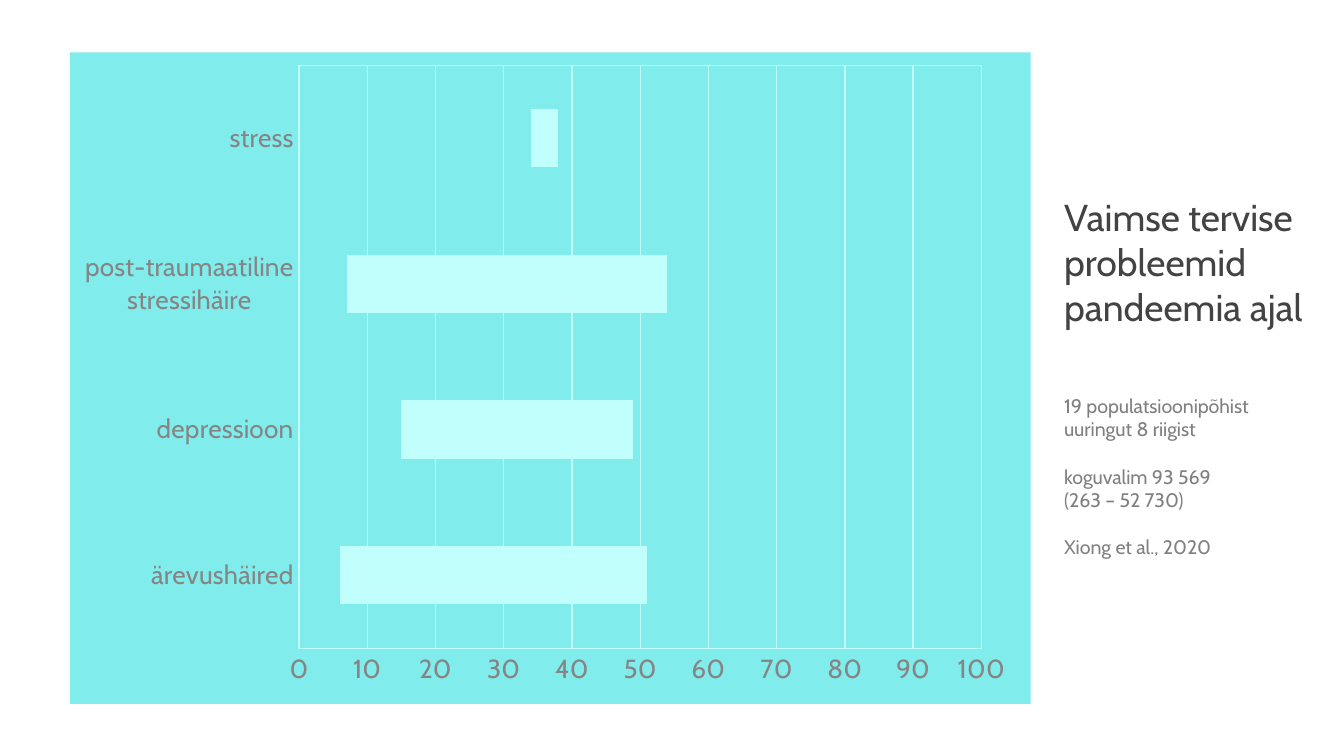
"""Build a slide with a floating range chart of mental health problems."""
from lxml.etree import SubElement
from pptx import Presentation
from pptx.chart.data import CategoryChartData
from pptx.dml.color import RGBColor
from pptx.enum.chart import XL_CHART_TYPE as ChartType, XL_TICK_MARK as TickMark
from pptx.enum.shapes import MSO_SHAPE as Shape
from pptx.enum.text import MSO_ANCHOR as Anchor
from pptx.oxml import parse_xml
from pptx.oxml.ns import nsdecls, qn
from pptx.util import Pt

FONT = "Cabin"
COLORS = {
    "panel": "81ECEC",
    "bar": "C0FFFC",
    "title": "434343",
    "label": "858585",
    "note": "808080",
}
RANGES = {
    "ärevushäired": (6, 45),
    "depressioon": (15, 34),
    "post-traumaatiline\nstressihäire": (7, 47),
    "stress": (34, 4),
}
PLOT_LAYOUT = {"x": 0.24, "y": 0.02, "w": 0.71, "h": 0.9}
PARAGRAPHS = [
    ("Vaimse tervise probleemid pandeemia ajal", 20, "title", 0),
    ("19 populatsioonipõhist uuringut 8 riigist", 10.5, "note", 35),
    ("koguvalim 93 569", 10.5, "note", 12.6),
    ("(263 – 52 730)", 10.5, "note", 0),
    ("Xiong et al., 2020", 10.5, "note", 12.6),
]


def rgb(name):
    return RGBColor.from_string(COLORS[name])


def style_font(font, size, color):
    font.name = FONT
    font.size = Pt(size)
    font.color.rgb = rgb(color)


def add_panel(slide, left, top, width, height):
    panel = slide.shapes.add_shape(
        Shape.RECTANGLE, Pt(left), Pt(top), Pt(width), Pt(height))
    panel.shadow.inherit = False
    panel.fill.solid()
    panel.fill.fore_color.rgb = rgb("panel")
    panel.line.fill.background()


def style_axis(axis):
    axis.major_tick_mark = axis.minor_tick_mark = TickMark.NONE
    axis.format.line.fill.background()
    style_font(axis.tick_labels.font, 14, "label")


def style_plot_area(chart):
    plot_area = chart._chartSpace.chart.plotArea
    for layout in plot_area.findall(qn("c:layout")):
        plot_area.remove(layout)
    layout = parse_xml(f"<c:layout {nsdecls('c')}/>")
    manual = SubElement(layout, qn("c:manualLayout"))
    settings = {"layoutTarget": "inner", "xMode": "edge", "yMode": "edge", **PLOT_LAYOUT}
    for tag, value in settings.items():
        SubElement(manual, qn(f"c:{tag}")).set("val", str(value))
    plot_area.insert(0, layout)
    plot_area.append(parse_xml(
        f"<c:spPr {nsdecls('c', 'a')}><a:noFill/><a:ln w='9525'><a:solidFill>"
        f"<a:srgbClr val='{COLORS['bar']}'/></a:solidFill></a:ln></c:spPr>"))


def add_range_chart(slide, left, top, width, height):
    data = CategoryChartData()
    data.categories = list(RANGES)
    for number, values in enumerate(zip(*RANGES.values()), 1):
        data.add_series(f"Series {number}", values)
    chart = slide.shapes.add_chart(
        ChartType.BAR_STACKED, Pt(left), Pt(top), Pt(width), Pt(height), data).chart
    chart.has_title = False
    chart.has_legend = False
    style_font(chart.font, 14, "title")

    plot = chart.plots[0]
    plot.gap_width = 150
    plot.overlap = 100
    plot.vary_by_categories = False
    offset, span = plot.series
    offset.format.fill.background()
    offset.format.line.fill.background()
    span.format.fill.solid()
    span.format.fill.fore_color.rgb = rgb("bar")

    value_axis = chart.value_axis
    for axis in (chart.category_axis, value_axis):
        style_axis(axis)
    value_axis.minimum_scale, value_axis.maximum_scale = 0, 100
    value_axis.major_unit = 10
    value_axis.has_major_gridlines = True
    gridline = value_axis.major_gridlines.format.line
    gridline.width = Pt(0.75)
    gridline.color.rgb = rgb("bar")
    style_plot_area(chart)


def add_text(slide, left, top, width, height):
    box = slide.shapes.add_textbox(Pt(left), Pt(top), Pt(width), Pt(height))
    frame = box.text_frame
    frame.word_wrap = True
    frame.vertical_anchor = Anchor.MIDDLE
    frame.margin_left = frame.margin_right = Pt(7.2)
    frame.margin_top = frame.margin_bottom = Pt(7.2)
    for index, (text, size, color, gap) in enumerate(PARAGRAPHS):
        paragraph = frame.add_paragraph() if index else frame.paragraphs[0]
        paragraph.space_before = Pt(gap)
        paragraph._p.get_or_add_pPr().set("marL", str(Pt(10.8)))
        run = paragraph.add_run()
        run.text = text
        style_font(run.font, size, color)


def main():
    presentation = Presentation()
    presentation.slide_width, presentation.slide_height = Pt(720), Pt(405)
    slide = presentation.slides.add_slide(presentation.slide_layouts[6])
    add_panel(slide, 37.4, 28.1, 514.8, 349)
    add_range_chart(slide, 36.7, 28.1, 514.8, 347)
    add_text(slide, 552.2, 28.1, 155.5, 347)
    presentation.save("out.pptx")


if __name__ == "__main__":
    main()
